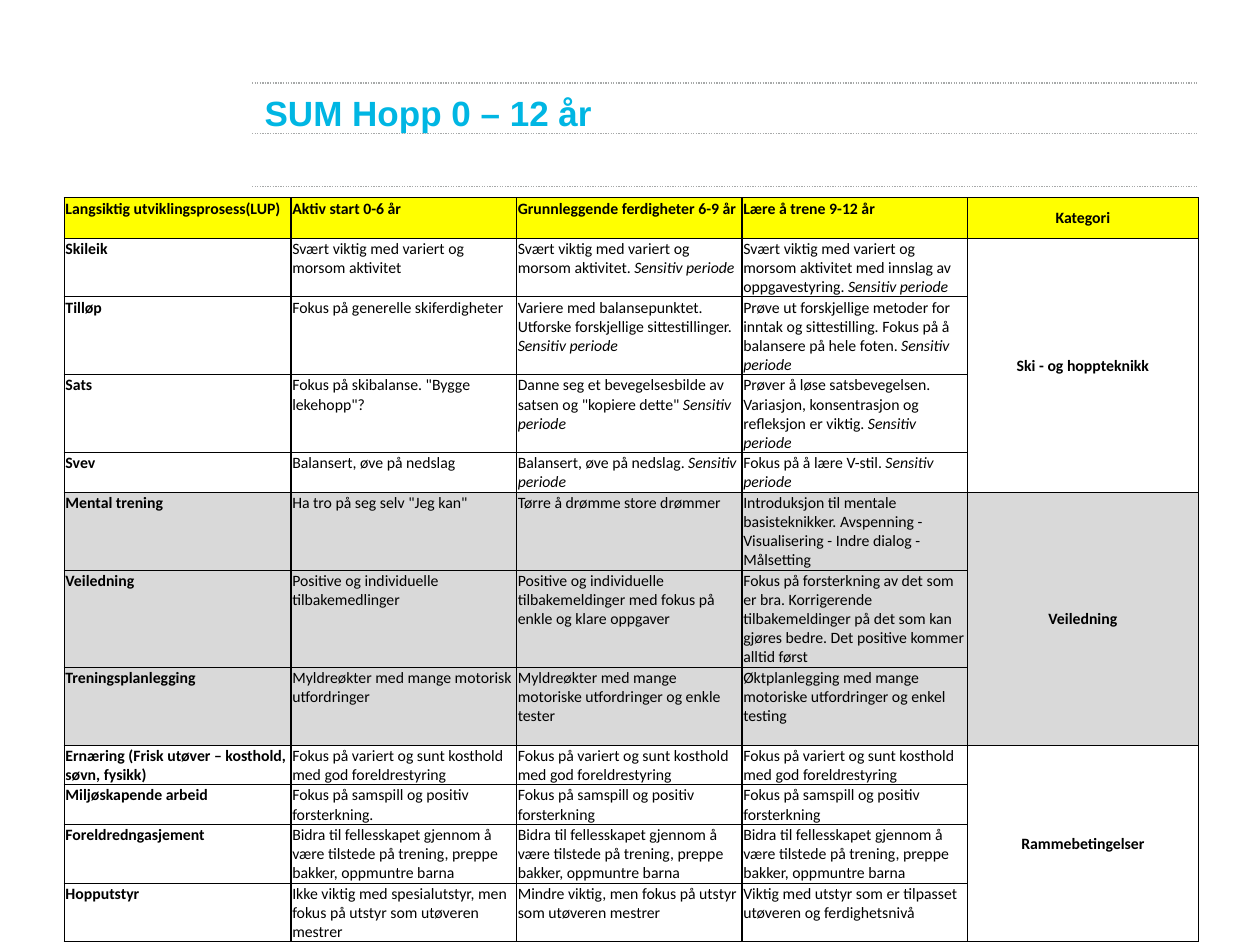
"""Build the slide with the ski jumping development table for ages 0 to 12."""
from lxml.etree import SubElement
from pptx import Presentation
from pptx.dml.color import RGBColor
from pptx.enum.dml import MSO_LINE
from pptx.enum.shapes import MSO_CONNECTOR
from pptx.enum.text import MSO_ANCHOR, PP_ALIGN
from pptx.oxml.ns import qn
from pptx.util import Inches, Pt

BLUE = RGBColor(0x00, 0xB6, 0xE3)
RULE_GRAY = RGBColor(0xA7, 0xA9, 0xA9)
YELLOW = RGBColor(0xFF, 0xFF, 0x00)
GRAY = RGBColor(0xD9, 0xD9, 0xD9)
WHITE = RGBColor(0xFF, 0xFF, 0xFF)
BLACK = RGBColor(0x00, 0x00, 0x00)

HEADER = ["Langsiktig utviklingsprosess(LUP)", "Aktiv start 0-6 år",
          "Grunnleggende ferdigheter 6-9 år", "Lære å trene 9-12 år", "Kategori"]
DIET = "Fokus på variert og sunt kosthold med god foreldrestyring"
TEAMWORK = "Fokus på samspill og positiv forsterkning"
PARENTS = ("Bidra til fellesskapet gjennom å være tilstede på trening, "
           "preppe bakker, oppmuntre barna")
SENSITIVE = "Sensitiv periode"
GROUPS = [
    ("Ski - og hoppteknikk", WHITE, [
        ("Skileik", "Svært viktig med variert og morsom aktivitet",
         "Svært viktig med variert og morsom aktivitet. " + SENSITIVE,
         "Svært viktig med variert og morsom aktivitet med innslag av oppgavestyring. " + SENSITIVE),
        ("Tilløp", "Fokus på generelle skiferdigheter",
         "Variere med balansepunktet. Utforske forskjellige sittestillinger. " + SENSITIVE,
         "Prøve ut forskjellige metoder for inntak og sittestilling. "
         "Fokus på å balansere på hele foten. " + SENSITIVE),
        ("Sats", 'Fokus på skibalanse. "Bygge lekehopp"?',
         'Danne seg et bevegelsesbilde av satsen og "kopiere dette" ' + SENSITIVE,
         "Prøver å løse satsbevegelsen. Variasjon, konsentrasjon og refleksjon er viktig. "
         + SENSITIVE),
        ("Svev", "Balansert, øve på nedslag",
         "Balansert, øve på nedslag. " + SENSITIVE,
         "Fokus på å lære V-stil. " + SENSITIVE),
    ]),
    ("Veiledning", GRAY, [
        ("Mental trening", 'Ha tro på seg selv "Jeg kan"', "Tørre å drømme store drømmer",
         "Introduksjon til mentale basisteknikker. Avspenning - Visualisering - "
         "Indre dialog - Målsetting"),
        ("Veiledning", "Positive og individuelle tilbakemedlinger",
         "Positive og individuelle tilbakemeldinger med fokus på enkle og klare oppgaver",
         "Fokus på forsterkning av det som er bra. Korrigerende tilbakemeldinger på det "
         "som kan gjøres bedre. Det positive kommer alltid først"),
        ("Treningsplanlegging", "Myldreøkter med mange motorisk utfordringer",
         "Myldreøkter med mange motoriske utfordringer og enkle tester",
         "Øktplanlegging med mange motoriske utfordringer og enkel testing"),
    ]),
    ("Rammebetingelser", WHITE, [
        ("Ernæring (Frisk utøver – kosthold, søvn, fysikk)", DIET, DIET, DIET),
        ("Miljøskapende arbeid", TEAMWORK + ".", TEAMWORK, TEAMWORK),
        ("Foreldredngasjement", PARENTS, PARENTS, PARENTS),
        ("Hopputstyr", "Ikke viktig med spesialutstyr, men fokus på utstyr som utøveren mestrer",
         "Mindre viktig, men fokus på utstyr som utøveren mestrer",
         "Viktig med utstyr som er tilpasset utøveren og ferdighetsnivå"),
    ]),
]
COL_WIDTHS = [1.8, 1.79, 1.79, 1.79, 1.83]
ROW_HEIGHTS = [0.32, 0.46, 0.61, 0.61, 0.31, 0.61, 0.76, 0.62, 0.31, 0.31, 0.46, 0.46]


def add_run(p, text, size=9, font="Calibri", color=BLACK, bold=False, italic=False):
    r = p.add_run()
    r.text = text
    r.font.size = Pt(size)
    r.font.name = font
    r.font.color.rgb = color
    r.font.bold = bold
    r.font.italic = italic


def fill_cell(cell, text, fill=WHITE, bold=False, centered=False):
    cell.margin_left = cell.margin_right = cell.margin_top = Inches(0.01)
    cell.margin_bottom = 0
    cell.vertical_anchor = MSO_ANCHOR.MIDDLE if centered else MSO_ANCHOR.TOP
    p = cell.text_frame.paragraphs[0]
    p.alignment = PP_ALIGN.CENTER if centered else PP_ALIGN.LEFT
    plain = text.removesuffix(SENSITIVE)
    if text:
        add_run(p, plain, bold=bold)
    if plain != text:
        add_run(p, SENSITIVE, italic=True)
    tcPr = cell._tc.get_or_add_tcPr()
    for side in ("lnL", "lnR", "lnT", "lnB"):
        ln = SubElement(tcPr, qn(f"a:{side}"), w=str(Pt(0.75)))
        SubElement(SubElement(ln, qn("a:solidFill")), qn("a:srgbClr"), val=str(BLACK))
    cell.fill.solid()
    cell.fill.fore_color.rgb = fill


prs = Presentation()
prs.slide_width, prs.slide_height = Inches(10), Inches(7.5)
s = prs.slides.add_slide(prs.slide_layouts[5])

for y in (0.66, 1.06, 1.48):
    rule = s.shapes.add_connector(MSO_CONNECTOR.STRAIGHT, Inches(2), Inches(y),
                                  Inches(9.5), Inches(y))
    rule.line.color.rgb = RULE_GRAY
    rule.line.width = Pt(0.75)
    rule.line.dash_style = MSO_LINE.ROUND_DOT
    SubElement(rule._element.spPr, qn("a:effectLst"))

title = s.shapes.title
title.left, title.top = Inches(2), Inches(0.68)
title.width, title.height = Inches(7.5), Inches(0.87)
tf = title.text_frame
tf.vertical_anchor = MSO_ANCHOR.TOP
p = tf.paragraphs[0]
p.alignment = PP_ALIGN.LEFT
add_run(p, "SUM Hopp 0 – 12 år", size=20, font="Arial", color=BLUE, bold=True)

table = s.shapes.add_table(len(ROW_HEIGHTS), len(COL_WIDTHS), Inches(0.51), Inches(1.57),
                           Inches(sum(COL_WIDTHS)), Inches(sum(ROW_HEIGHTS))).table
for col, width in zip(table.columns, COL_WIDTHS):
    col.width = Inches(width)
for row, height in zip(table.rows, ROW_HEIGHTS):
    row.height = Inches(height)

category_col = len(COL_WIDTHS) - 1
for c, text in enumerate(HEADER):
    fill_cell(table.cell(0, c), text, fill=YELLOW, bold=True, centered=c == category_col)

first = 1
for category, fill, rows in GROUPS:
    for r, texts in enumerate(rows, first):
        for c, text in enumerate(texts):
            fill_cell(table.cell(r, c), text, fill=fill, bold=c == 0)
        fill_cell(table.cell(r, category_col), category if r == first else "",
                  fill=fill, bold=True, centered=True)
    last = first + len(rows) - 1
    table.cell(first, category_col).merge(table.cell(last, category_col))
    first = last + 1

prs.save("out.pptx")
